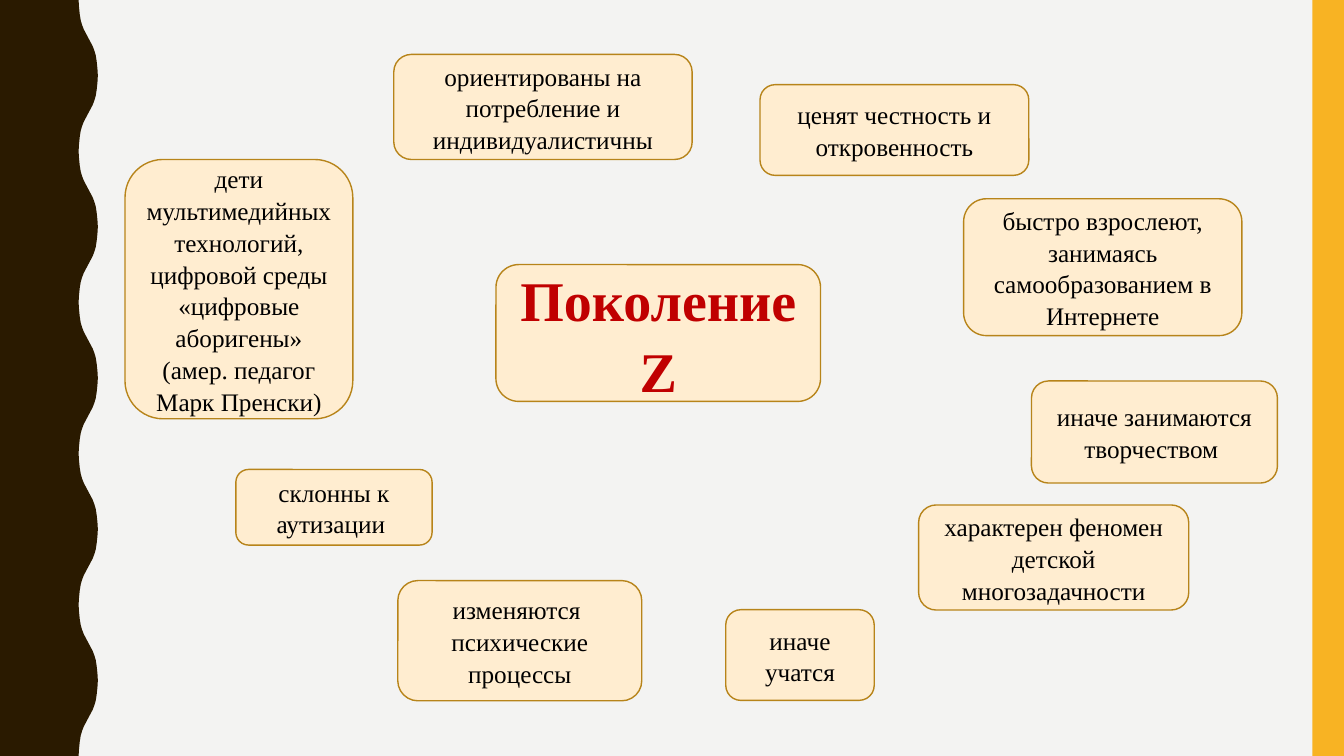
from dataclasses import dataclass

from pptx import Presentation
from pptx import util as u
from pptx.dml.color import RGBColor
from pptx.enum import shapes, text


@dataclass(frozen=True)
class Theme:
    font: str = "Times New Roman"
    background: str = "F3F3F2"
    wave: str = "2A1A00"
    stripe: str = "F8B323"
    panel: str = "FFEDD0"
    outline: str = "B7841A"
    ink: str = "000000"
    accent: str = "C00000"
    title_size: int = 40
    body_size: int = 18
    line_width: int = 1
    line_spacing: float = 1.05


class SlideBuilder:
    COLUMNS = 100
    ROWS = 100

    def __init__(self, deck, theme):
        self.deck = deck
        self.theme = theme
        self.page = deck.slides.add_slide(deck.slide_layouts[5])
        self.paint(self.page.background.fill, theme.background)

    def paint(self, fill, colour):
        fill.solid()
        fill.fore_color.rgb = RGBColor.from_string(colour)

    def x(self, columns):
        return round(self.deck.slide_width * columns / self.COLUMNS)

    def y(self, rows):
        return round(self.deck.slide_height * rows / self.ROWS)

    def frame(self, area):
        left, top, width, height = area
        return self.x(left), self.y(top), self.x(width), self.y(height)

    def shape(self, kind, area, colour):
        box = self.page.shapes.add_shape(kind, *self.frame(area))
        box.shadow.inherit = False
        self.paint(box.fill, colour)
        box.line.fill.background()
        return box

    def panel(self, area):
        box = self.shape(shapes.MSO_SHAPE.ROUNDED_RECTANGLE, area, self.theme.panel)
        self.paint(box.line.fill, self.theme.outline)
        box.line.width = u.Pt(self.theme.line_width)
        return box

    def label(self, box, words, size, colour, bold=False):
        body = box.text_frame
        body.text = words
        body.word_wrap = True
        body.auto_size = text.MSO_AUTO_SIZE.NONE
        body.vertical_anchor = text.MSO_ANCHOR.MIDDLE
        for para in body.paragraphs:
            para.alignment = text.PP_ALIGN.CENTER
            para.line_spacing = self.theme.line_spacing
            for span in para.runs:
                span.font.name = self.theme.font
                span.font.size = u.Pt(size)
                span.font.bold = bold
                span.font.color.rgb = RGBColor.from_string(colour)

    def trait(self, words, area):
        self.label(self.panel(area), words, self.theme.body_size, self.theme.ink)

    def title(self, words, area):
        panel = self.panel(area)
        title = self.page.shapes.title
        title.left, title.top, title.width, title.height = self.frame(area)
        self.label(title, words, self.theme.title_size, self.theme.accent, bold=True)
        panel.element.addnext(title.element)

    def wave(self, trough, crest, period, profile):
        half = period / 2
        rise = [(trough + (crest - trough) * reach, half * step) for step, reach in profile]
        fall = [(column, period - row) for column, row in reversed(rise)]
        cycles = self.ROWS // period
        edge = [(column, row + cycle * period)
                for cycle in range(cycles) for column, row in rise + fall[1:]]
        points = [(self.x(column), self.y(row)) for column, row in edge + [(0, self.ROWS)]]
        builder = self.page.shapes.build_freeform(0, 0)
        builder.add_line_segments(points, close=True)
        band = builder.convert_to_shape()
        band.shadow.inherit = False
        self.paint(band.fill, self.theme.wave)
        band.line.fill.background()

    def stripe(self, area):
        self.shape(shapes.MSO_SHAPE.RECTANGLE, area, self.theme.stripe)


WAVE_PROFILE = [
    (0, 0), (0.09, 0.02), (0.19, 0.06), (0.27, 0.11), (0.33, 0.18),
    (0.39, 0.27), (0.5, 0.5), (0.61, 0.73), (0.67, 0.82), (0.73, 0.89),
    (0.81, 0.94), (0.91, 0.98), (1, 1),
]

TRAITS = [
    ("дети мультимедийных технологий, цифровой среды «цифровые аборигены» "
     "(амер. педагог Марк Пренски)", (9.3, 21.1, 16.95, 34.3)),
    ("ориентированы на потребление и индивидуалистичны", (29.3, 7.2, 22.2, 13.9)),
    ("ценят честность и откровенность", (56.55, 11.2, 20, 12)),
    ("быстро взрослеют, занимаясь самообразованием в Интернете", (71.7, 26.3, 20.7, 18.1)),
    ("иначе занимаются творчеством ", (76.75, 50.4, 18.3, 13.5)),
    ("характерен феномен детской многозадачности", (68.35, 66.8, 20.1, 13.9)),
    ("иначе учатся", (54, 80.65, 11.05, 12)),
    ("изменяются \nпсихические процессы", (29.6, 76.8, 18.15, 15.9)),
    ("склонны к аутизации ", (17.55, 62.1, 14.6, 10)),
]


def main():
    deck = Presentation()
    deck.slide_width = u.Inches(13.33)
    deck.slide_height = u.Inches(7.5)
    slide = SlideBuilder(deck, Theme())
    slide.wave(trough=5.85, crest=7.28, period=20, profile=WAVE_PROFILE)
    slide.stripe((97.65, 0, 2.35, 100))
    slide.title("Поколение Z", (36.9, 35, 24.15, 18.1))
    for words, area in TRAITS:
        slide.trait(words, area)
    deck.save("out.pptx")


if __name__ == "__main__":
    main()
